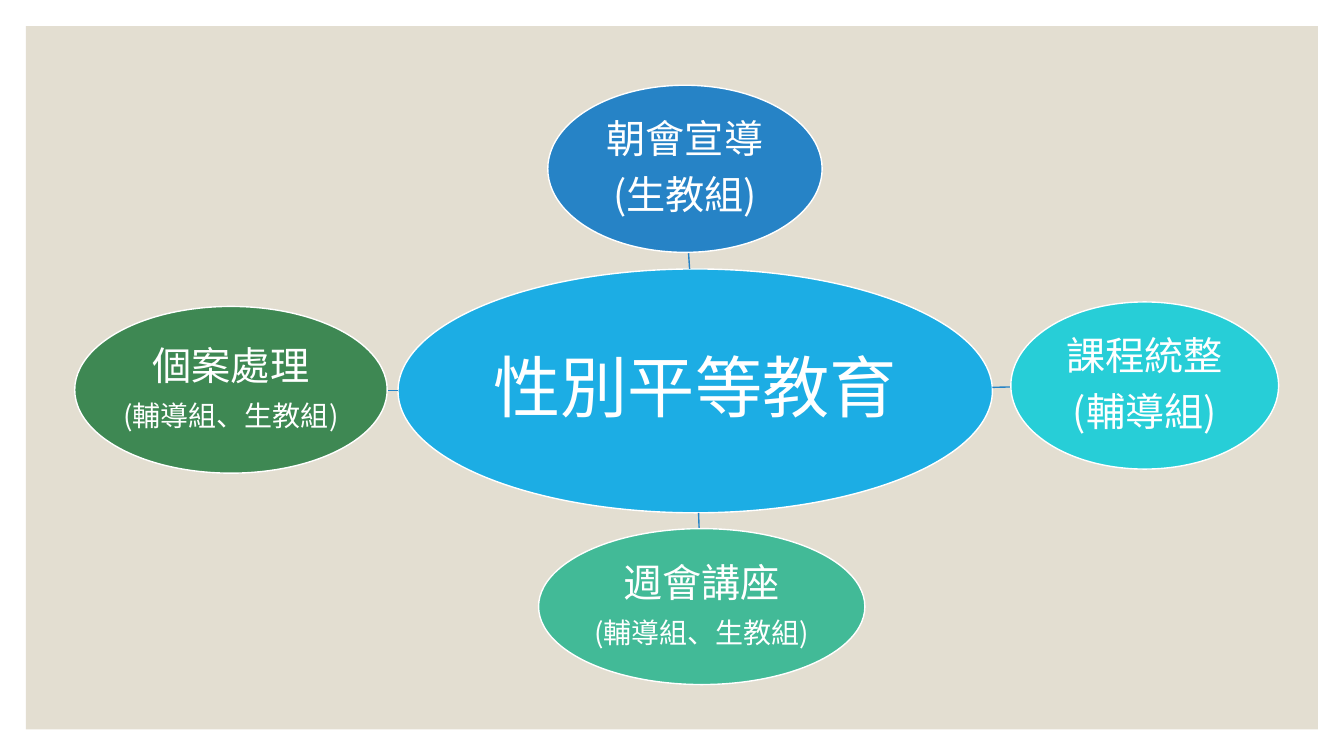
"""Build a hub-and-spoke slide on gender equity education."""
from pptx import Presentation
from pptx.dml.color import RGBColor
from pptx.enum.shapes import MSO_CONNECTOR, MSO_SHAPE
from pptx.enum.text import MSO_ANCHOR, PP_ALIGN
from pptx.oxml.ns import qn
from pptx.util import Pt
from lxml.etree import SubElement

FONT = "Noto Sans CJK JP"
COLORS = {
    "panel": "E3DED1",
    "white": "FFFFFF",
    "hub": "1CADE4",
    "assembly": "2683C6",
    "curriculum": "27CED7",
    "lecture": "42BA97",
    "casework": "3E8853",
    "spoke": "2683C6",
}


def color(key):
    return RGBColor.from_string(COLORS[key])


def add_topic(key, box, lines, inset):
    topic = slide.shapes.add_shape(MSO_SHAPE.OVAL, *map(Pt, box))
    topic.shadow.inherit = False
    topic.fill.solid()
    topic.fill.fore_color.rgb = color(key)
    topic.line.color.rgb = color("white")
    topic.line.width = Pt(1)
    frame = topic.text_frame
    frame.word_wrap = True
    frame.vertical_anchor = MSO_ANCHOR.MIDDLE
    frame.margin_left = frame.margin_right = Pt(inset)
    frame.margin_top = frame.margin_bottom = Pt(inset)
    for index, (wording, size) in enumerate(lines):
        paragraph = frame.paragraphs[0] if index == 0 else frame.add_paragraph()
        paragraph.text = wording
        paragraph.alignment = PP_ALIGN.CENTER
        paragraph.line_spacing = 0.9
        paragraph.space_after = Pt(size * 0.35)
        paragraph.font.name = FONT
        paragraph.font.size = Pt(size)
        paragraph.font.color.rgb = color("white")


presentation = Presentation()
presentation.slide_width = Pt(960)
presentation.slide_height = Pt(540)
slide = presentation.slides.add_slide(presentation.slide_layouts[6])

panel = slide.shapes.add_shape(MSO_SHAPE.RECTANGLE, Pt(18.6), Pt(18.6), Pt(922.8), Pt(502.5))
panel.shadow.inherit = False
panel.fill.solid()
panel.fill.fore_color.rgb = color("panel")
panel.line.fill.background()

add_topic("hub", (284.3, 192.1, 424.6, 174.2), [("性別平等教育", 48)], 2.4)

branches = [
    ("assembly", (391.3, 60.9, 196, 119.4), [("朝會宣導", 28), ("(生教組)", 28)],
     (492.6, 192.1, 491.8, 180.1)),
    ("curriculum", (722, 215.7, 191.3, 119.4), [("課程統整", 28), ("(輔導組)", 28)],
     (708.8, 276.7, 722, 276.4)),
    ("lecture", (384.7, 377.6, 233.1, 111.4), [("週會講座", 28), ("(輔導組、生教組)", 20)],
     (499, 366.3, 499.4, 377.6)),
    ("casework", (53.4, 218.9, 223.2, 119.1), [("個案處理", 28), ("(輔導組、生教組)", 20)],
     (284.3, 278.8, 276.6, 278.8)),
]
for key, box, lines, ends in branches:
    spoke = slide.shapes.add_connector(MSO_CONNECTOR.STRAIGHT, *map(Pt, ends))
    spoke.line.color.rgb = color("spoke")
    spoke.line.width = Pt(1)
    SubElement(spoke._element.spPr, qn("a:effectLst"))
    add_topic(key, box, lines, 1.4)

presentation.save("out.pptx")
